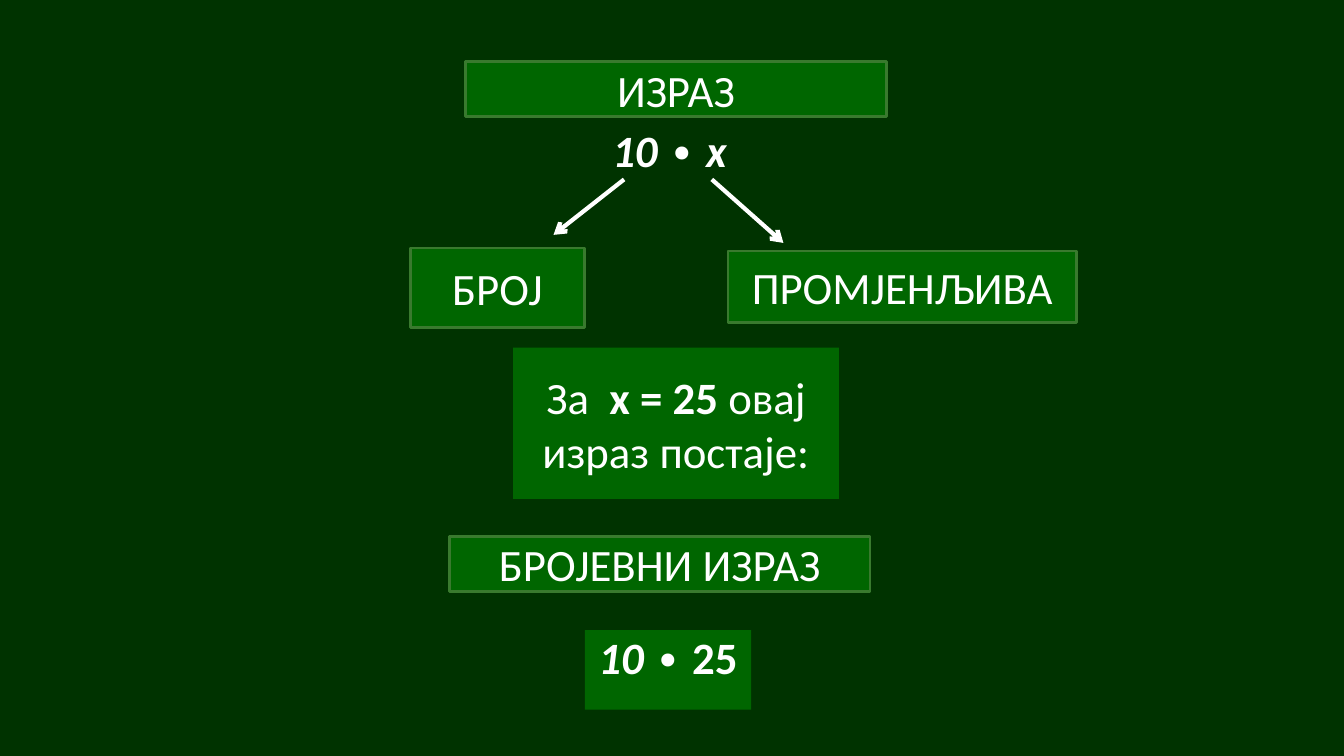
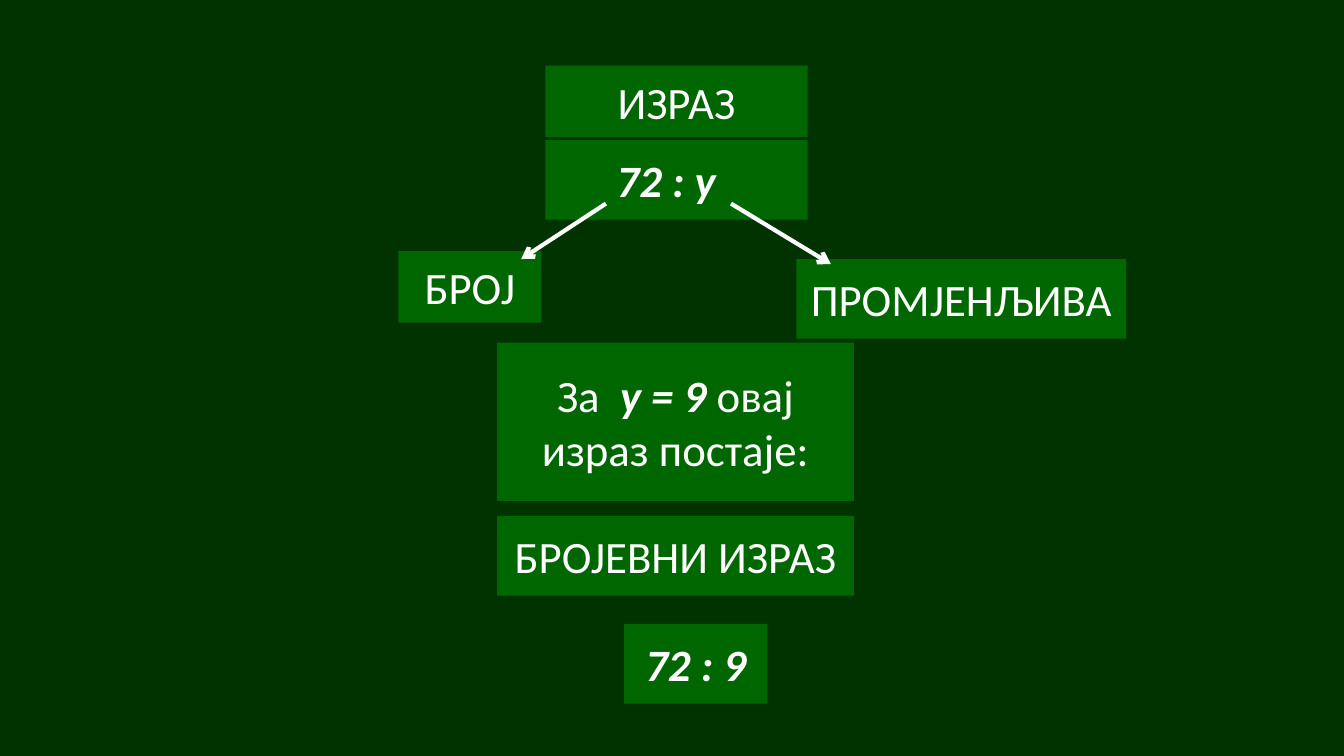
from lxml.etree import SubElement
from pptx import Presentation
from pptx.dml.color import RGBColor
from pptx.enum.shapes import MSO_CONNECTOR, MSO_SHAPE
from pptx.enum.text import MSO_ANCHOR, MSO_AUTO_SIZE, PP_ALIGN
from pptx.oxml.ns import qn
from pptx.util import Inches, Pt

DARK = RGBColor(0x00, 0x33, 0x00)
GREEN = RGBColor(0x00, 0x66, 0x00)
EDGE = RGBColor(0x39, 0x7A, 0x2E)
WHITE = RGBColor(0xFF, 0xFF, 0xFF)
FONT = "Calibri"
SIZE = Pt(32)

PLAIN, BOLD, BOTH = (False, False), (True, False), (True, True)


def write(shape, parts):
    frame = shape.text_frame
    frame.word_wrap = True
    frame.auto_size = MSO_AUTO_SIZE.NONE
    frame.vertical_anchor = MSO_ANCHOR.MIDDLE
    line = frame.paragraphs[0]
    line.alignment = PP_ALIGN.CENTER
    for text, (bold, italic) in parts:
        run = line.add_run()
        run.text = text
        font = run.font
        font.name, font.size = FONT, SIZE
        font.bold, font.italic = bold, italic
        font.color.rgb = WHITE


def paint(shape, edge):
    shape.fill.solid()
    shape.fill.fore_color.rgb = GREEN
    if edge:
        shape.line.color.rgb = EDGE
        shape.line.width = Pt(2)
    else:
        shape.line.fill.background()


SLIDES = [
    {
        "title": ((4.62, 0.61, 4.17, 0.55), True),
        "boxes": [
            ((4.07, 2.46, 1.73, 0.79), True, [("БРОЈ", PLAIN)]),
            ((7.22, 2.49, 3.46, 0.71), True, [("ПРОМЈЕНЉИВА", PLAIN)]),
            ((5.09, 3.45, 3.23, 1.5), False,
             [("За  ", PLAIN), ("x = 25 ", BOLD), ("овај израз постаје:", PLAIN)]),
            ((4.46, 5.32, 4.17, 0.55), True, [("БРОЈЕВНИ ИЗРАЗ", PLAIN)]),
        ],
        "arrows": [(6.19, 1.78, 5.49, 2.33), (7.06, 1.78, 7.77, 2.41)],
    },
    {
        "title": ((5.41, 0.65, 2.6, 0.71), False),
        "boxes": [
            ((3.95, 2.49, 1.42, 0.71), False, [("БРОЈ", PLAIN)]),
            ((7.9, 2.57, 3.27, 0.79), False, [("ПРОМЈЕНЉИВА", PLAIN)]),
            ((4.93, 3.4, 3.54, 1.57), False,
             [("За  ", PLAIN), ("y = 9 ", BOTH), ("овај израз постаје:", PLAIN)]),
            ((4.93, 5.12, 3.54, 0.79), False, [("БРОЈЕВНИ ИЗРАЗ", PLAIN)]),
            ((6.19, 6.19, 1.42, 0.79), False, [("72 : 9", BOTH)]),
        ],
        "arrows": [(6.01, 2.02, 5.17, 2.57), (7.25, 2.02, 8.24, 2.62)],
    },
]

deck = Presentation()
deck.slide_width, deck.slide_height = Inches(13.33), Inches(7.5)
back = deck.slide_master.background.fill
back.solid()
back.fore_color.rgb = DARK

pages = []
for data in SLIDES:
    slide = deck.slides.add_slide(deck.slide_layouts[5])
    pages.append(slide)
    place, edge = data["title"]
    title = slide.shapes.title
    title.left, title.top, title.width, title.height = map(Inches, place)
    paint(title, edge)
    write(title, [("ИЗРАЗ", PLAIN)])
    for place, edge, parts in data["boxes"]:
        box = slide.shapes.add_shape(MSO_SHAPE.RECTANGLE, *map(Inches, place))
        box.shadow.inherit = False
        paint(box, edge)
        write(box, parts)

first, second = pages
term = first.shapes.add_textbox(Inches(5.64), Inches(1.2), Inches(2), Inches(0.56))
write(term, [("10 ", BOTH), ("∙ ", PLAIN), ("x", BOTH)])

value = first.shapes.add_shape(
    MSO_SHAPE.RECTANGLE, Inches(5.8), Inches(6.25), Inches(1.65), Inches(0.79))
value.shadow.inherit = False
paint(value, False)
write(value, [("10 ", BOTH), ("∙ ", PLAIN), ("25", BOLD)])
value.text_frame.vertical_anchor = MSO_ANCHOR.TOP
value.text_frame.margin_top = 0

ratio = second.shapes.add_shape(
    MSO_SHAPE.RECTANGLE, Inches(5.41), Inches(1.39), Inches(2.6), Inches(0.79))
ratio.shadow.inherit = False
paint(ratio, False)
write(ratio, [("72 : y", BOTH)])
ratio.text_frame.margin_right = Inches(0.3)

for slide, data in zip(pages, SLIDES):
    for ends in data["arrows"]:
        arrow = slide.shapes.add_connector(MSO_CONNECTOR.STRAIGHT, *map(Inches, ends))
        arrow.line.color.rgb = WHITE
        arrow.line.width = Pt(3)
        SubElement(arrow.line._get_or_add_ln(), qn("a:tailEnd"), type="arrow")
        SubElement(arrow._element.spPr, qn("a:effectLst"))

deck.save("out.pptx")
